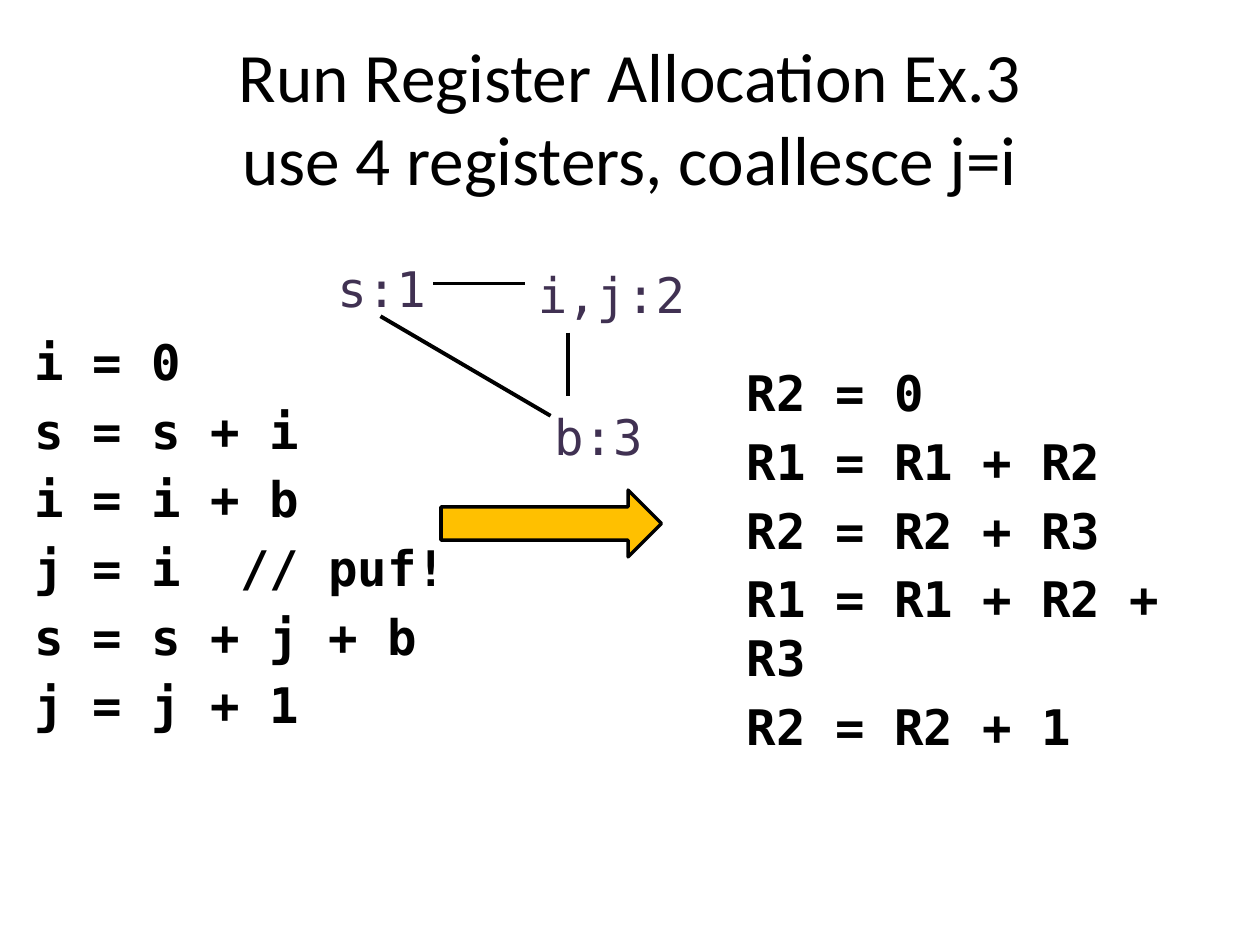
from lxml import etree
from pptx import Presentation
from pptx import util as u
from pptx.dml.color import RGBColor
from pptx.enum import shapes, text
from pptx.oxml.ns import qn

WIDE, HIGH = 10, 7.5
HUES = {"ink": "000000", "node": "403152", "arrow": "FFC000"}
SANS, MONO = "Calibri", "DejaVu Sans Mono"
SIZE = 28

HEAD = "Run Register Allocation Ex.3\vuse 4 registers, coallesce j=i"
CODE = ["i = 0", "s = s + i", "i = i + b", "j = i  // puf!",
        "s = s + j + b", "j = j + 1"]
REGS = ["R2 = 0", "R1 = R1 + R2", "R2 = R2 + R3",
        "R1 = R1 + R2 + R3", "R2 = R2 + 1"]

# Interference graph: label, box, wrap; then edges as start and end
NODES = [("s:1", (2.58, 2, 0.91, 0.57), False),
         ("i,j:2", (4.17, 2.05, 1.42, 0.57), True),
         ("b:3", (4.3, 3.18, 0.91, 0.57), False)]
EDGES = [(3.44, 2.25, 4.17, 2.25),
         (3.02, 2.51, 4.37, 3.3),
         (4.51, 2.64, 4.51, 3.14)]


def inches(box):
    return [u.Inches(n) for n in box]


def hue(name):
    return RGBColor.from_string(HUES[name])


def place(shape, box):
    shape.left, shape.top, shape.width, shape.height = inches(box)


def style(para, face, size, tint="ink", bold=False):
    font = para.font
    font.name, font.size, font.bold = face, u.Pt(size), bold
    font.color.rgb = hue(tint)


def title(shape, words):
    place(shape, (0.05 * WIDE, 0.04 * HIGH, 0.9 * WIDE, HIGH / 6))
    frame = shape.text_frame
    frame.text = words
    frame.auto_size = text.MSO_AUTO_SIZE.NONE
    frame.vertical_anchor = text.MSO_ANCHOR.MIDDLE
    para = frame.paragraphs[0]
    para.alignment = text.PP_ALIGN.CENTER
    style(para, SANS, 39.6)


def code(shape, lines):
    frame = shape.text_frame
    frame.word_wrap = True
    frame.auto_size = text.MSO_AUTO_SIZE.NONE
    frame.text = "\n".join(lines)
    for para in frame.paragraphs:
        para.space_before = u.Pt(0.2 * SIZE)
        style(para, MONO, SIZE, bold=True)
        # No bullet and no indent
        props = para._p.get_or_add_pPr()
        props.set("marL", "0")
        props.set("indent", "0")
        etree.SubElement(props, qn("a:buNone")) if props.find(qn("a:defRPr")) is None \
            else props.find(qn("a:defRPr")).addprevious(etree.Element(qn("a:buNone")))


def arrow(slide, box):
    shape = slide.shapes.add_shape(shapes.MSO_SHAPE.RIGHT_ARROW, *inches(box))
    shape.shadow.inherit = False
    shape.fill.solid()
    shape.fill.fore_color.rgb = hue("arrow")
    shape.line.color.rgb = hue("ink")
    shape.line.width = u.Pt(2)


def node(group, label, box, wrap):
    frame = group.shapes.add_textbox(*inches(box)).text_frame
    frame.word_wrap = wrap
    frame.auto_size = text.MSO_AUTO_SIZE.SHAPE_TO_FIT_TEXT
    frame.text = label
    style(frame.paragraphs[0], MONO, SIZE, "node")


def edge(group, ends):
    line = group.shapes.add_connector(shapes.MSO_CONNECTOR.STRAIGHT, *inches(ends))
    line.line.color.rgb = hue("ink")
    line.line.width = u.Pt(2.25)
    etree.SubElement(line._element.spPr, qn("a:effectLst"))


def main():
    deck = Presentation()
    deck.slide_width, deck.slide_height = inches((WIDE, HIGH))
    slide = deck.slides.add_slide(deck.slide_layouts[1])

    # Title and source program
    title(slide.shapes.title, HEAD)
    body = slide.placeholders[1]
    place(body, (0.17, 2.58, 3.92, 3.5))
    code(body, CODE)

    # Arrow to the program with registers
    arrow(slide, (3.5, 3.89, 1.75, 0.53))
    code(slide.shapes.add_textbox(*inches((5.83, 2.83, 4.16, 3.33))), REGS)

    # Interference graph
    graph = slide.shapes.add_group_shape()
    for item in NODES:
        node(graph, *item)
    for ends in EDGES:
        edge(graph, ends)

    deck.save("out.pptx")


if __name__ == "__main__":
    main()
